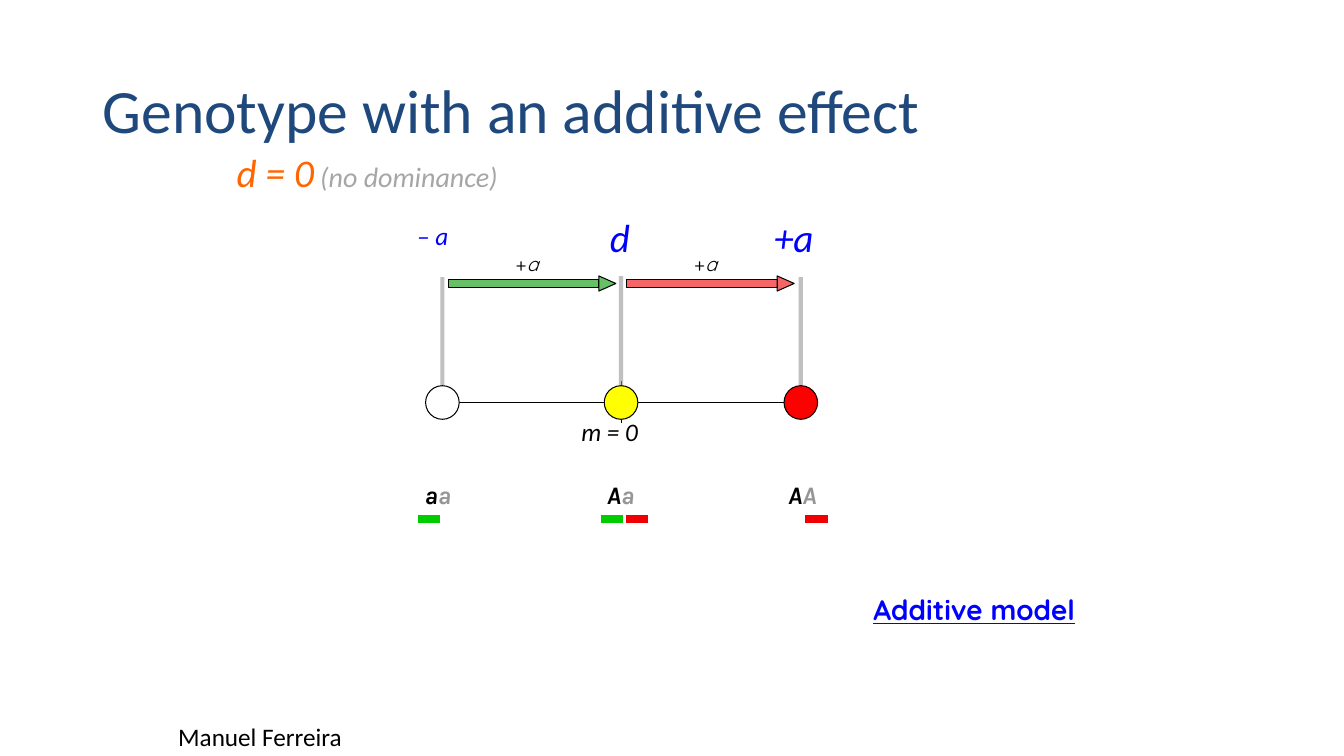
from dataclasses import dataclass

import lxml.etree
import pptx
import pptx.dml.color
import pptx.enum.shapes
import pptx.enum.text
import pptx.oxml.ns
import pptx.shapes.autoshape
import pptx.shapes.base
import pptx.shapes.connector
import pptx.slide
import pptx.util

Pt = pptx.util.Pt
Align = pptx.enum.text.PP_ALIGN
Anchor = pptx.enum.text.MSO_ANCHOR
Shapes = pptx.enum.shapes.MSO_SHAPE


@dataclass(frozen=True)
class Theme:
    """Colours, fonts and sizes of the slide."""
    title: str = "1F497D"
    black: str = "000000"
    blue: str = "0000FF"
    orange: str = "FF6600"
    pale_gray: str = "A6A6A6"
    gray: str = "969696"
    white: str = "FFFFFF"
    yellow: str = "FFFF00"
    red: str = "FF0000"
    low_allele: str = "00CC00"
    high_allele: str = "F00000"
    low_arrow: str = "009900"
    body_font: str = "Calibri"
    allele_font: str = "Karla"
    accent_font: str = "Quicksand"
    title_size: float = 44
    large: float = 28
    medium: float = 20
    normal: float = 18
    small: float = 14
    hairline: float = 0.75
    opacity: int = 60


THEME = Theme()


@dataclass(frozen=True)
class Run:
    """One piece of uniformly formatted text."""
    text: str
    size: float
    color: str = THEME.black
    font: str = THEME.body_font
    bold: bool = False
    italic: bool = False
    underline: bool = False


@dataclass(frozen=True)
class Label:
    """A text box with its place and runs."""
    left: float
    top: float
    width: float
    height: float
    runs: tuple[Run, ...]
    align: Align = Align.LEFT
    wrap: bool = False
    anchor: Anchor = Anchor.TOP
    spacing: float = 1.0


@dataclass(frozen=True)
class Genotype:
    """A genotype on the axis with its alleles and their marks."""
    center: float
    column_top: float
    fill: str
    alleles: str
    alleles_center: float
    marks: tuple[tuple[float, str], ...]


@dataclass(frozen=True)
class Step:
    """A horizontal block arrow for one allele substitution."""
    left: float
    color: str


GENOTYPES = (
    Genotype(316, 198, THEME.white, "aa", 312.8, ((298.8, THEME.low_allele),)),
    Genotype(443.6, 197.3, THEME.yellow, "Aa", 443.4,
             ((429.1, THEME.low_allele), (447.1, THEME.high_allele))),
    Genotype(572, 198, THEME.red, "AA", 573.1, ((575.3, THEME.high_allele),)),
)
STEPS = (Step(320.4, THEME.low_arrow), Step(447.8, THEME.high_allele))
LABELS = (
    Label(66.24, 28.8, 828, 104.4,
          (Run("Genotype with an additive effect", THEME.title_size, THEME.title),),
          wrap=True, anchor=Anchor.MIDDLE, spacing=0.9),
    Label(162, 102.2, 208, 41,
          (Run("d = 0", THEME.large, THEME.orange, italic=True),
           Run(" (no dominance)", THEME.medium, THEME.pale_gray, italic=True))),
    Label(290.9, 154.1, 41, 28.8, (Run("– a", THEME.normal, THEME.blue, italic=True),)),
    Label(428.4, 149, 28.8, 41, (Run("d", THEME.large, THEME.blue, italic=True),), Align.CENTER),
    Label(545.8, 149, 43.2, 41, (Run("+a", THEME.large, THEME.blue, italic=True),)),
    Label(408.2, 293.8, 55.4, 28.8, (Run("m = 0", THEME.normal, italic=True),)),
    Label(599.8, 419.8, 192.2, 31.7,
          (Run("Additive model", THEME.medium, THEME.blue, THEME.accent_font,
               bold=True, underline=True),), Align.CENTER, wrap=True),
    Label(120.2, 511.9, 133.2, 28.8, (Run("Manuel Ferreira", THEME.normal),)),
)
AXIS_Y = 287.5
CIRCLE = 24
MARK_Y, MARK_WIDTH = 370.8, 15.84
SHAFT_LENGTH, SHAFT_HEIGHT, ARROW_Y = 107.3, 5.8, 202.5
HEAD_LENGTH, HEAD_HEIGHT = 12.2, 10.8


def rgb(color: str) -> pptx.dml.color.RGBColor:
    """Turn a hexadecimal string into a colour."""
    return pptx.dml.color.RGBColor.from_string(color)


def set_opacity(shape: pptx.shapes.base.BaseShape, percent: int) -> None:
    """Make the first colour of a shape partly transparent."""
    color = next(shape.element.iter(pptx.oxml.ns.qn("a:srgbClr")))
    alpha = lxml.etree.SubElement(color, pptx.oxml.ns.qn("a:alpha"))
    alpha.set("val", str(percent * 1000))


def add_label(slide: pptx.slide.Slide, label: Label) -> None:
    """Write a text box."""
    box = slide.shapes.add_textbox(
        Pt(label.left), Pt(label.top), Pt(label.width), Pt(label.height))
    frame = box.text_frame
    frame.word_wrap = label.wrap
    frame.vertical_anchor = label.anchor
    paragraph = frame.paragraphs[0]
    paragraph.alignment = label.align
    paragraph.line_spacing = label.spacing
    for item in label.runs:
        run = paragraph.add_run()
        run.text = item.text
        formats = {"name": item.font, "size": Pt(item.size), "bold": item.bold,
                   "italic": item.italic, "underline": item.underline}
        for name, value in formats.items():
            setattr(run.font, name, value)
        run.font.color.rgb = rgb(item.color)


def add_line(slide: pptx.slide.Slide, start: tuple[float, float], end: tuple[float, float],
             color: str, width: float) -> pptx.shapes.connector.Connector:
    """Draw a straight line without a shadow."""
    line = slide.shapes.add_connector(
        pptx.enum.shapes.MSO_CONNECTOR.STRAIGHT, *map(Pt, (*start, *end)))
    line.line.color.rgb = rgb(color)
    line.line.width = Pt(width)
    properties = line.element.find(pptx.oxml.ns.qn("p:spPr"))
    lxml.etree.SubElement(properties, pptx.oxml.ns.qn("a:effectLst"))
    return line


def add_centered(slide: pptx.slide.Slide, kind: Shapes, center: tuple[float, float],
                 width: float, height: float, color: str) -> pptx.shapes.autoshape.Shape:
    """Draw an outlined shape around a centre point."""
    x, y = center
    shape = slide.shapes.add_shape(
        kind, Pt(x - width / 2), Pt(y - height / 2), Pt(width), Pt(height))
    shape.shadow.inherit = False
    shape.fill.solid()
    shape.fill.fore_color.rgb = rgb(color)
    shape.line.color.rgb = rgb(THEME.black)
    shape.line.width = Pt(THEME.hairline)
    return shape


def add_genotype(slide: pptx.slide.Slide, genotype: Genotype) -> None:
    """Draw a genotype's column, circle, alleles and marks."""
    x = genotype.center
    column = add_line(slide, (x, genotype.column_top), (x, 289), THEME.gray, 3)
    set_opacity(column, THEME.opacity)
    add_centered(slide, Shapes.OVAL, (x, AXIS_Y), CIRCLE, CIRCLE, genotype.fill)
    runs = tuple(Run(allele, THEME.normal, color, THEME.allele_font, bold=True, italic=True)
                 for allele, color in zip(genotype.alleles, (THEME.black, THEME.gray)))
    add_label(slide, Label(genotype.alleles_center - 36, 339.1, 72, 25.2, runs,
                           Align.CENTER, wrap=True))
    for left, color in genotype.marks:
        add_line(slide, (left, MARK_Y), (left + MARK_WIDTH, MARK_Y), color, 6)


def add_step(slide: pptx.slide.Slide, step: Step) -> None:
    """Draw a block arrow with its effect above."""
    shaft = add_centered(slide, Shapes.RECTANGLE, (step.left + SHAFT_LENGTH / 2, ARROW_Y),
                         SHAFT_LENGTH, SHAFT_HEIGHT, step.color)
    head = add_centered(slide, Shapes.ISOSCELES_TRIANGLE,
                        (step.left + SHAFT_LENGTH + HEAD_LENGTH / 2, ARROW_Y),
                        HEAD_HEIGHT, HEAD_LENGTH, step.color)
    head.rotation = 90
    for shape in (shaft, head):
        set_opacity(shape, THEME.opacity)
    runs = (Run("+", THEME.small, font=THEME.accent_font),
            Run("a", THEME.small, font=THEME.accent_font, italic=True))
    add_label(slide, Label(step.left + 36.3, 176.4, 39.6, 23.8, runs, Align.CENTER, wrap=True))


def main() -> None:
    """Build and save the slide."""
    presentation = pptx.Presentation()
    presentation.slide_width, presentation.slide_height = Pt(960), Pt(540)
    slide = presentation.slides.add_slide(presentation.slide_layouts[6])
    add_line(slide, (311, AXIS_Y), (576, AXIS_Y), THEME.black, THEME.hairline)
    add_line(slide, (443.6, 272.2), (443.6, 302.4), THEME.black, THEME.hairline)
    for label in LABELS:
        add_label(slide, label)
    for genotype in GENOTYPES:
        add_genotype(slide, genotype)
    for step in STEPS:
        add_step(slide, step)
    presentation.save("out.pptx")


if __name__ == "__main__":
    main()
